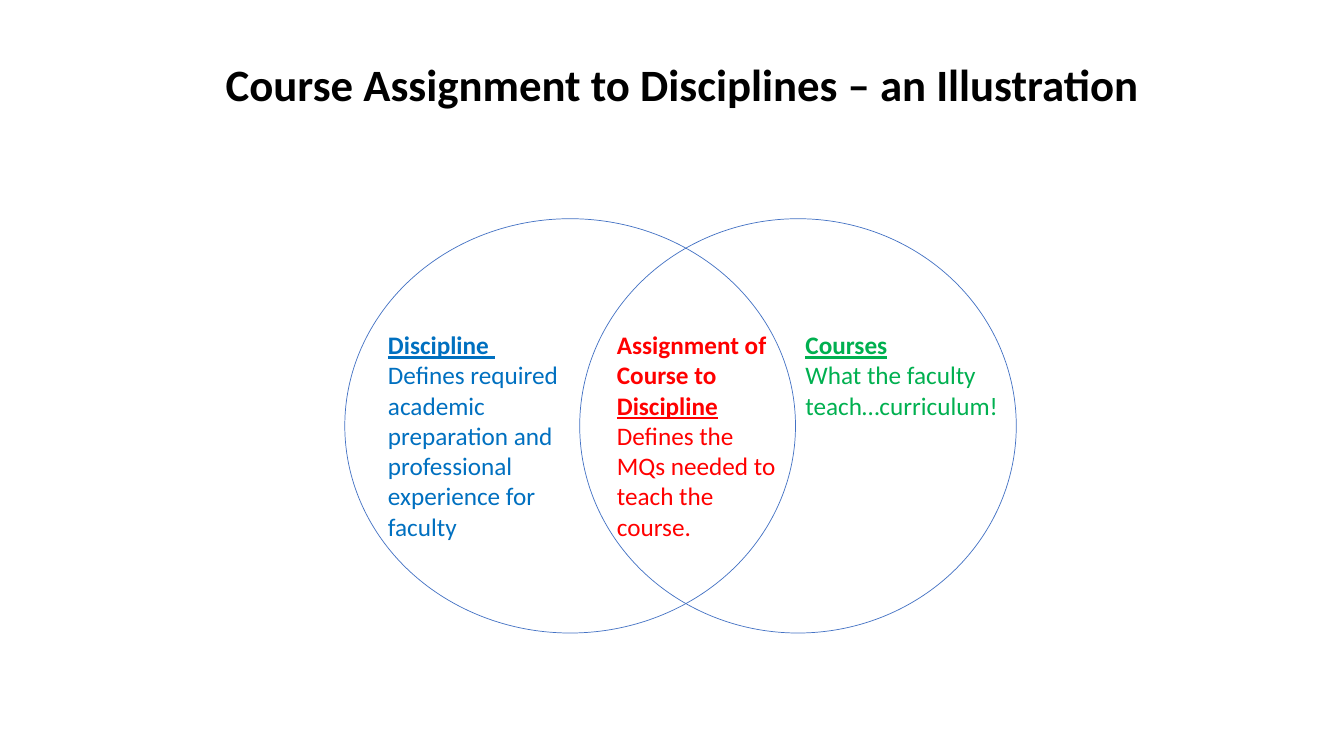
from pptx import Presentation
from pptx.dml.color import RGBColor
from pptx.enum.shapes import MSO_SHAPE
from pptx.enum.text import PP_ALIGN
from pptx.util import Inches, Pt

OVAL = MSO_SHAPE.OVAL
LEFT, CENTER = PP_ALIGN.LEFT, PP_ALIGN.CENTER
FONT = "Calibri"
COLORS = {
    "title": "000000",
    "outline": "4472C4",
    "discipline": "0070C0",
    "assignment": "FF0000",
    "courses": "00B050",
}
CIRCLE_TOP, CIRCLE_HEIGHT = 2.17, 4.11
LABEL_TOP = 3.22

# Run styles as (bold, underline)
PLAIN, BOLD, HEADING, UNDERLINED = (False, False), (True, False), (True, True), (False, True)


def rgb(name):
    return RGBColor.from_string(COLORS[name])


def add_circle(s, left, width):
    sp = s.shapes.add_shape(OVAL, Inches(left), Inches(CIRCLE_TOP),
                            Inches(width), Inches(CIRCLE_HEIGHT))
    sp.shadow.inherit = False
    sp.fill.background()
    sp.line.color.rgb = rgb("outline")
    sp.line.width = Pt(0.5)


def add_text(s, left, top, width, height, paragraphs, color, size=18, align=LEFT):
    """Add a text box; each paragraph is a list of (text, style) runs."""
    box = s.shapes.add_textbox(Inches(left), Inches(top), Inches(width), Inches(height))
    tf = box.text_frame
    tf.word_wrap = True
    for i, runs in enumerate(paragraphs):
        p = tf.paragraphs[0] if i == 0 else tf.add_paragraph()
        p.alignment = align
        p.font.name = FONT
        p.font.size = Pt(size)
        p.font.color.rgb = rgb(color)
        for text, (bold, underline) in runs:
            r = p.add_run()
            r.text = text
            r.font.bold = bold
            r.font.underline = underline


def main():
    prs = Presentation()
    prs.slide_width, prs.slide_height = Inches(13.33), Inches(7.5)
    s = prs.slides.add_slide(prs.slide_layouts[6])

    add_circle(s, 3.42, 4.47)
    add_circle(s, 5.75, 4.33)

    add_text(s, 3.75, LABEL_TOP, 2.27, 2.22, [
        [("Discipline", HEADING), (" ", UNDERLINED)],
        [("Defines required academic preparation and professional experience for faculty",
          PLAIN)],
    ], "discipline")
    add_text(s, 7.89, LABEL_TOP, 2.19, 1.01, [
        [("Courses", HEADING)],
        [("What the faculty teach…curriculum!", PLAIN)],
    ], "courses")
    add_text(s, 6.02, LABEL_TOP, 1.81, 2.52, [
        [("Assignment of Course to ", BOLD), ("Discipline", HEADING),
         (" Defines the MQs needed to teach the course.", PLAIN)],
    ], "assignment")
    add_text(s, 0.94, 0.51, 11.66, 0.64,
             [[("Course Assignment to Disciplines – an Illustration", BOLD)]],
             "title", size=32, align=CENTER)

    prs.save("out.pptx")


if __name__ == "__main__":
    main()
